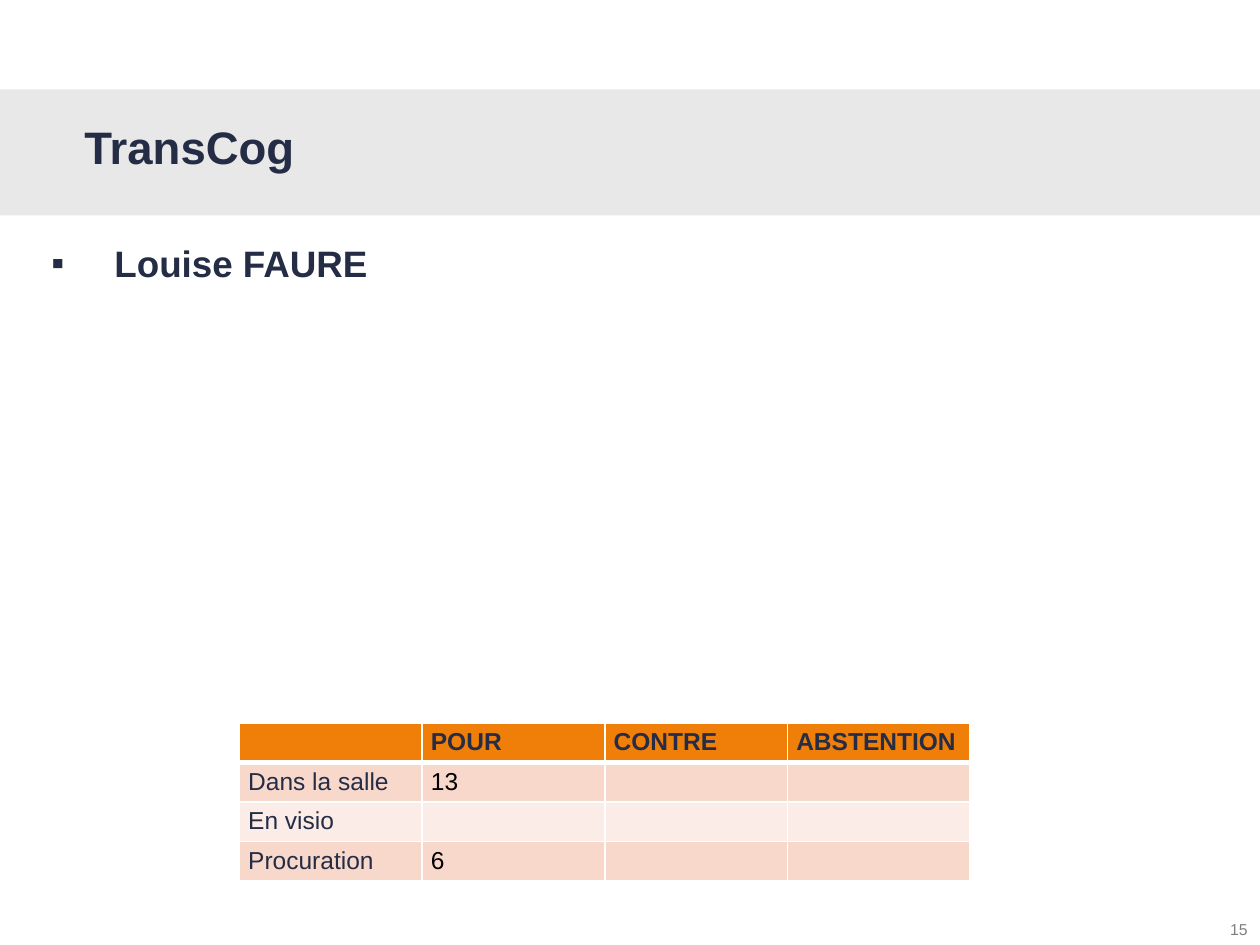
"""Build the TransCog vote slide."""
from pptx import Presentation
from pptx.dml.color import RGBColor as RGB
from pptx.enum.shapes import MSO_SHAPE as Shape
from pptx.enum.text import MSO_ANCHOR as Anchor, PP_ALIGN as Align
from pptx.oxml.ns import qn
from pptx.util import Inches, Pt
from lxml.etree import SubElement as Sub

TITLE = "TransCog"
NAME = "Louise FAURE"
PAGE = "15"
VOTES = [
    ("", "POUR", "CONTRE", "ABSTENTION"),
    ("Dans la salle", "13", "", ""),
    ("En visio", "", "", ""),
    ("Procuration", "6", "", ""),
]
THEME = dict(
    font="Arial", ink="242D45", black="000000", grey="7F7F7F", white="FFFFFF",
    band="D9D9D9", head="F07F09", odd="F9D8CC", even="FCECE7",
    title=26, name=21, cell=14, page=9,
)


def write(frame, text, size, color="ink", bold=False, align=Align.LEFT,
          line=1.0, after=0, bullet=None, pad=(0.1, 0.05), wrap=True):
    """Put one formatted paragraph in a text frame."""
    frame.word_wrap = wrap
    frame.vertical_anchor = Anchor.TOP
    frame.margin_left = frame.margin_right = Inches(pad[0])
    frame.margin_top = frame.margin_bottom = Inches(pad[1])
    para = frame.paragraphs[0]
    para.alignment, para.line_spacing = align, line
    para.space_before, para.space_after = Pt(0), Pt(after)
    if bullet:
        props = para._p.get_or_add_pPr()
        props.set("marL", str(Inches(0.5)))
        props.set("indent", str(-Inches(0.5)))
        Sub(props, qn("a:buFont"), typeface=THEME["font"])
        Sub(props, qn("a:buChar"), char=bullet)
    run = para.add_run()
    run.text = text
    font = run.font
    font.name, font.size, font.bold = THEME["font"], Pt(THEME[size]), bold
    font.color.rgb = RGB.from_string(THEME[color])


def box(slide, *area):
    """Add a text box and return its frame."""
    return slide.shapes.add_textbox(*map(Inches, area)).text_frame


def edge(cell, side, width):
    """Draw one white border of a cell."""
    line = Sub(cell._tc.get_or_add_tcPr(), qn(f"a:{side}"), w=str(Pt(width)))
    Sub(Sub(line, qn("a:solidFill")), qn("a:srgbClr"), val=THEME["white"])


def paint(cell, text, row, col):
    """Format one cell of the vote table."""
    head = row == 0
    for side in ("lnL", "lnR", "lnT", "lnB"):
        thick = (head and side == "lnB") or (row == 1 and side == "lnT")
        edge(cell, side, 3 if thick else 1)
    cell.fill.solid()
    fill = "head" if head else "odd" if row % 2 else "even"
    cell.fill.fore_color.rgb = RGB.from_string(THEME[fill])
    cell.margin_left = cell.margin_right = Inches(0.07)
    cell.margin_top = cell.margin_bottom = Inches(0.04)
    if text:
        write(cell.text_frame, text, "cell", bold=head, pad=(0.07, 0.04),
              color="black" if col and not head else "ink")
    else:
        Sub(cell.text_frame.paragraphs[0]._p, qn("a:endParaRPr"),
            sz=str(THEME["cell"] * 100))


def add_band(slide):
    """Place the translucent band behind the title."""
    band = slide.shapes.add_shape(
        Shape.RECTANGLE, *map(Inches, (-0.01, 0.71, 10.01, 1)))
    band.shadow.inherit = False
    band.line.fill.background()
    band.fill.solid()
    band.fill.fore_color.rgb = RGB.from_string(THEME["band"])
    tint = band._element.spPr.find(f".//{qn('a:srgbClr')}")
    Sub(tint, qn("a:alpha"), val="59000")
    slide.shapes._spTree.insert(2, band._element)


def add_votes(slide):
    """Add the vote table."""
    rows, cols = len(VOTES), len(VOTES[0])
    table = slide.shapes.add_table(
        rows, cols, *map(Inches, (1.9, 5.74, 5.8, 1.22))).table
    table.horz_banding = False
    for row, texts in enumerate(VOTES):
        for col, text in enumerate(texts):
            paint(table.cell(row, col), text, row, col)


def main():
    """Lay out the slide and save it."""
    deck = Presentation()
    deck.slide_width, deck.slide_height = Inches(10), Inches(7.5)
    slide = deck.slides.add_slide(deck.slide_layouts[5])
    add_band(slide)
    title = slide.shapes.title
    title.left, title.top, title.width, title.height = map(
        Inches, (0.57, 0.85, 9.12, 0.78))
    write(title.text_frame, TITLE, "title", bold=True, line=1.1)
    write(box(slide, 0.31, 1.83, 9.38, 1.18), NAME, "name", bold=True,
          line=1.1, after=6, bullet="▪")
    add_votes(slide)
    write(box(slide, 9.64, 7.25, 0.36, 0.25), PAGE, "page", color="grey",
          align=Align.RIGHT, wrap=False)
    deck.save("out.pptx")


if __name__ == "__main__":
    main()
